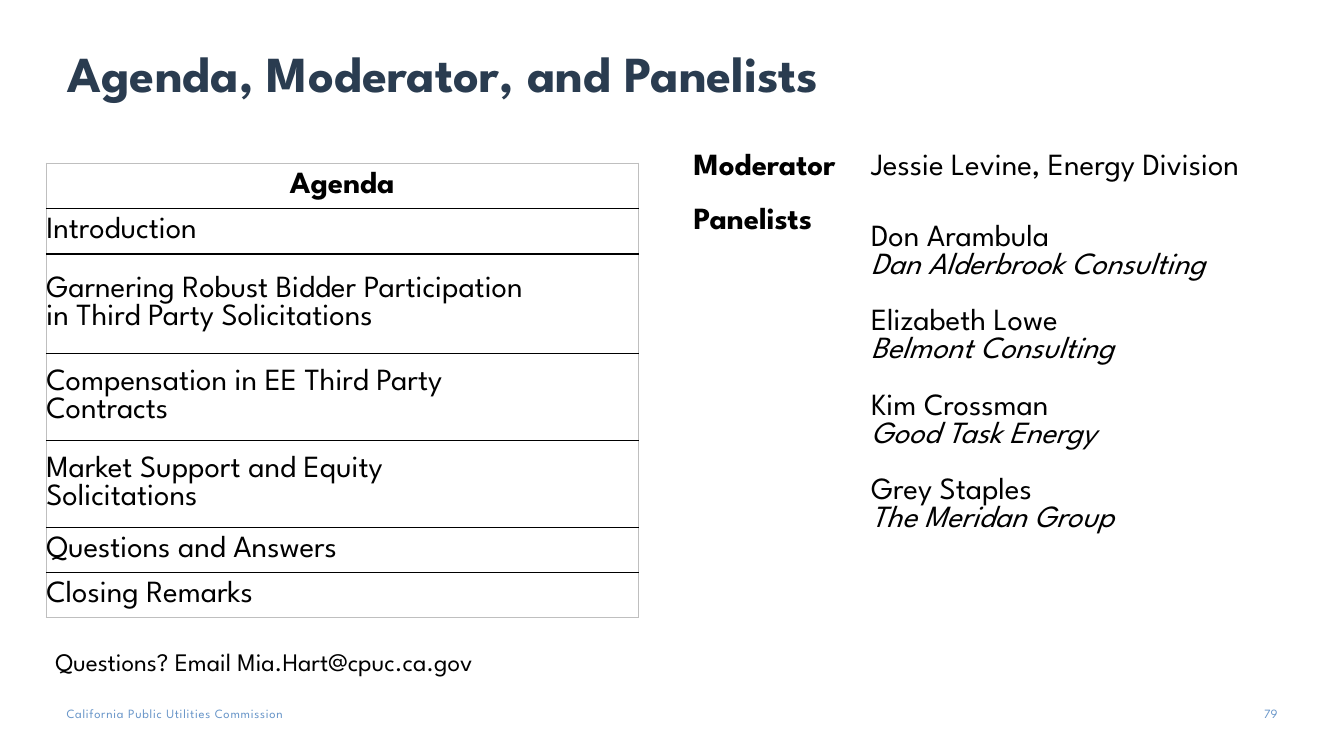
from lxml import etree
from pptx import Presentation
from pptx.dml.color import RGBColor
from pptx.enum.text import MSO_ANCHOR, PP_ALIGN
from pptx.oxml.ns import qn
from pptx.util import Inches, Pt

LEFT, CENTER, RIGHT = PP_ALIGN.LEFT, PP_ALIGN.CENTER, PP_ALIGN.RIGHT
TOP, MIDDLE, BOTTOM = MSO_ANCHOR.TOP, MSO_ANCHOR.MIDDLE, MSO_ANCHOR.BOTTOM
TITLE_ONLY = 5
FONT = "League Spartan"
BLACK, NAVY, BLUE, GREY = "000000", "2A3C50", "6996C9", "BFBFBF"

AGENDA = [
    (["Agenda"], 0.45),
    (["Introduction"], 0.45),
    (["Garnering Robust Bidder Participation", "in Third Party Solicitations"], 0.99),
    (["Compensation in EE Third Party", "Contracts"], 0.86),
    (["Market Support and Equity", "Solicitations"], 0.86),
    (["Questions and Answers"], 0.45),
    (["Closing Remarks"], 0.45),
]
PANELISTS = [
    ("Don Arambula", "Dan Alderbrook Consulting"),
    ("Elizabeth Lowe", "Belmont Consulting"),
    ("Kim Crossman", "Good Task Energy"),
    ("Grey Staples", "The Meridan Group"),
]


def color(hex_string):
    """Turn a hex string into a colour."""
    return RGBColor.from_string(hex_string)


def set_all(target, formats):
    """Set every attribute named in a dict of format values."""
    for name, value in formats.items():
        setattr(target, name, value)


def write(paragraph, text, size, hex_string=BLACK, layout=None, **font_formats):
    """Write one formatted run into a paragraph and return the run."""
    run = paragraph.add_run()
    run.text = text
    set_all(run.font, {"name": FONT, "size": Pt(size), "bold": False, **font_formats})
    run.font.color.rgb = color(hex_string)
    set_all(paragraph, layout or {})
    return run


def next_paragraph(frame, index):
    """Return the first paragraph of a frame, or add a further one."""
    return frame.add_paragraph() if index else frame.paragraphs[0]


def set_margins(target, left, top, right, bottom):
    """Set the four inner margins in inches."""
    sides = ("margin_left", "margin_top", "margin_right", "margin_bottom")
    set_all(target, dict(zip(sides, map(Inches, (left, top, right, bottom)))))


def add_label(slide, box, text, size, hex_string, margins, align=LEFT):
    """Add a one-line text box and return its run."""
    frame = slide.shapes.add_textbox(*map(Inches, box)).text_frame
    frame.word_wrap = True
    set_margins(frame, *margins)
    return write(frame.paragraphs[0], text, size, hex_string, {"alignment": align})


def add_plain_table(slide, box, widths, heights):
    """Add a table without banding or fills."""
    table = slide.shapes.add_table(len(heights), len(widths), *map(Inches, box)).table
    set_all(table, {"first_row": False, "horz_banding": False})
    for column, width in zip(table.columns, widths):
        column.width = Inches(width)
    for row, height in zip(table.rows, heights):
        row.height = Inches(height)
    for cell in table.iter_cells():
        cell.fill.background()
    return table


def set_borders(cell, borders):
    """Draw the cell borders given as a dict of tag to colour."""
    properties = cell._tc.get_or_add_tcPr()
    for index, (tag, hex_string) in enumerate(borders.items()):
        line = etree.Element(qn(tag), w=str(Pt(1)))
        fill = etree.SubElement(line, qn("a:solidFill"))
        etree.SubElement(fill, qn("a:srgbClr"), val=hex_string)
        properties.insert(index, line)


def add_title(slide, box):
    """Place and format the slide title."""
    title = slide.shapes.title
    set_all(title, dict(zip(("left", "top", "width", "height"), map(Inches, box))))
    frame = title.text_frame
    set_all(frame, {"vertical_anchor": BOTTOM, "word_wrap": True})
    set_margins(frame, 0, 0.05, 0.1, 0.05)
    write(frame.paragraphs[0], "Agenda, Moderator, and Panelists", 36, NAVY,
          {"alignment": LEFT, "line_spacing": 0.9}, bold=True)


def add_agenda(slide, box):
    """Add the ruled agenda table."""
    table = add_plain_table(slide, box, [box[2]], [height for _, height in AGENDA])
    last = len(AGENDA) - 1
    for index, (lines, _) in enumerate(AGENDA):
        cell = table.cell(index, 0)
        cell.vertical_anchor = MIDDLE
        set_margins(cell, 0, 0, 0, 0)
        heading = index == 0
        for number, line in enumerate(lines):
            write(next_paragraph(cell.text_frame, number), line, 22,
                  layout={"alignment": CENTER if heading else LEFT}, bold=heading)
        set_borders(cell, {
            "a:lnL": GREY,
            "a:lnR": GREY,
            "a:lnT": GREY if heading else BLACK,
            "a:lnB": GREY if index == last else BLACK,
        })


def add_people(slide, box):
    """Add the moderator and panelists in two columns."""
    table = add_plain_table(slide, box, [1.76, 4.62], [0.41, 3.91])
    for column, text in enumerate(("Moderator", "Jessie Levine, Energy Division")):
        cell = table.cell(0, column)
        cell.vertical_anchor = MIDDLE
        write(cell.text_frame.paragraphs[0], text, 22, bold=column == 0)
    write(table.cell(1, 0).text_frame.paragraphs[0], "Panelists", 22,
          layout={"line_spacing": 1.5, "space_before": Pt(10)}, bold=True)
    names = table.cell(1, 1)
    set_all(names, {"vertical_anchor": TOP, "margin_top": Inches(0.36)})
    for index, (person, firm) in enumerate(PANELISTS):
        gap = {"space_before": Pt(20 if index else 0)}
        write(next_paragraph(names.text_frame, index), person, 22, layout=gap)
        write(names.text_frame.add_paragraph(), firm, 22, italic=True)


def add_footer(slide, box):
    """Add the agency name and the page number along the foot."""
    left, top, width, height = box
    agency = add_label(slide, (left, top, 3.21, height),
                       "California Public Utilities Commission", 9, BLUE, (0, 0, 0, 0))
    agency._r.get_or_add_rPr().set("spc", "50")
    add_label(slide, (left + width - 0.42, top, 0.42, height), "79", 9, BLUE,
              (0, 0, 0, 0), RIGHT)


def main():
    """Build and save the slide."""
    deck = Presentation()
    set_all(deck, {"slide_width": Inches(13.33), "slide_height": Inches(7.5)})
    slide = deck.slides.add_slide(deck.slide_layouts[TITLE_ONLY])
    add_title(slide, (0.67, 0.45, 12, 0.63))
    add_agenda(slide, (0.46, 1.62, 5.87, 4.5))
    add_people(slide, (6.78, 1.46, 6.38, 4.32))
    add_label(slide, (0.45, 6.36, 5.69, 0.4), "Questions? Email Mia.Hart@cpuc.ca.gov",
              18, BLACK, (0.1, 0.05, 0.1, 0.05))
    add_footer(slide, (0.66, 7, 12.01, 0.2))
    deck.save("out.pptx")


if __name__ == "__main__":
    main()
